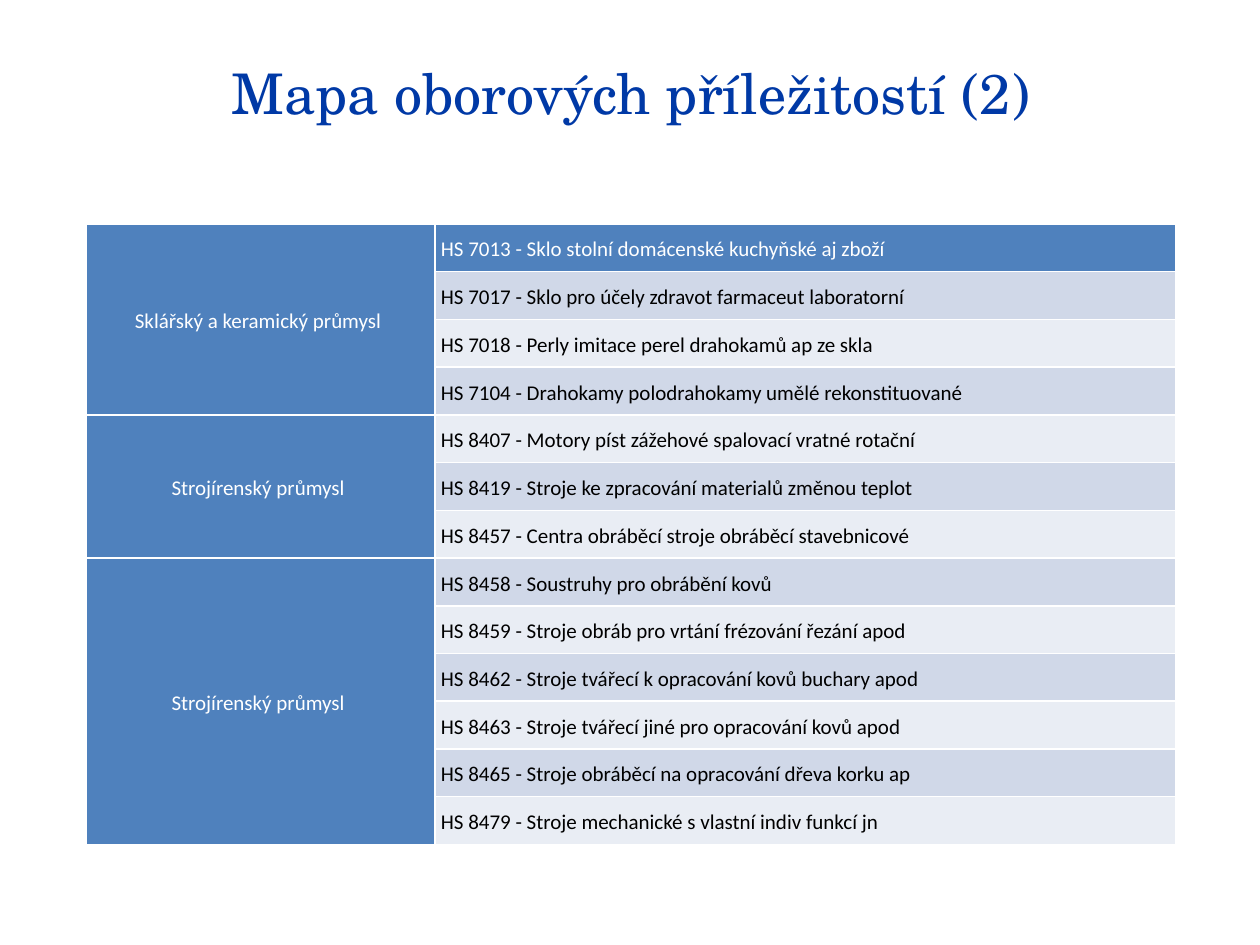
from lxml import etree
from pptx import Presentation
from pptx import util as u
from pptx.dml.color import RGBColor
from pptx.enum import text
from pptx.oxml import ns

EMU_PER_PX = 914400 / 126
COLORS = {
    "title": "0039A6",
    "header": "4F81BD",
    "dark_band": "D0D8E8",
    "light_band": "E9EDF4",
    "border": "FFFFFF",
    "light_text": "FFFFFF",
    "dark_text": "000000",
}
SECTORS = [
    ("Sklářský a keramický průmysl ", [
        "HS 7013 - Sklo stolní domácenské kuchyňské aj zboží",
        "HS 7017 - Sklo pro účely zdravot farmaceut laboratorní",
        "HS 7018 - Perly imitace perel drahokamů ap ze skla",
        "HS 7104 - Drahokamy polodrahokamy umělé rekonstituované",
    ]),
    ("Strojírenský průmysl ", [
        "HS 8407 - Motory píst zážehové spalovací vratné rotační",
        "HS 8419 - Stroje ke zpracování materialů změnou teplot",
        "HS 8457 - Centra obráběcí stroje obráběcí stavebnicové",
    ]),
    ("Strojírenský průmysl ", [
        "HS 8458 - Soustruhy pro obrábění kovů",
        "HS 8459 - Stroje obráb pro vrtání frézování řezání apod",
        "HS 8462 - Stroje tvářecí k opracování kovů buchary apod",
        "HS 8463 - Stroje tvářecí jiné pro opracování kovů apod",
        "HS 8465 - Stroje obráběcí na opracování dřeva korku ap",
        "HS 8479 - Stroje mechanické s vlastní indiv funkcí jn",
    ]),
]


def px(length):
    return u.Emu(round(length * EMU_PER_PX))


def rgb(name):
    return RGBColor.from_string(COLORS[name])


def assign(target, values):
    for name, value in values.items():
        setattr(target, name, value)


class SlideBuilder:
    """Holds the text style and the current slide."""

    title_font = {"name": "TeX Gyre Schola", "size": u.Pt(32)}
    cell_font = {"name": "Calibri", "size": u.Pt(12)}
    cell_format = {
        "margin_left": px(6), "margin_right": px(6),
        "margin_top": px(9), "margin_bottom": px(9),
        "vertical_anchor": text.MSO_ANCHOR.MIDDLE,
    }

    def __init__(self, slide):
        self.slide = slide

    def title(self, wording, left, top, width, height):
        title = self.slide.shapes.title
        assign(title, {"left": px(left), "top": px(top),
                       "width": px(width), "height": px(height)})
        title.text_frame.text = wording
        assign(title.text_frame, {"vertical_anchor": text.MSO_ANCHOR.MIDDLE,
                                  "word_wrap": True})
        paragraph = title.text_frame.paragraphs[0]
        paragraph.alignment = text.PP_ALIGN.CENTER
        assign(paragraph.font, self.title_font)
        paragraph.font.color.rgb = rgb("title")

    def borders(self, cell, points=1):
        properties = cell._tc.get_or_add_tcPr()
        for side in ("lnL", "lnR", "lnT", "lnB"):
            line = etree.SubElement(properties, ns.qn(f"a:{side}"), w=str(u.Pt(points)))
            fill = etree.SubElement(line, ns.qn("a:solidFill"))
            etree.SubElement(fill, ns.qn("a:srgbClr"), val=COLORS["border"])

    def cell(self, cell, wording, fill, color, alignment):
        self.borders(cell)
        assign(cell, self.cell_format)
        cell.fill.solid()
        cell.fill.fore_color.rgb = rgb(fill)
        cell.text = wording
        paragraph = cell.text_frame.paragraphs[0]
        assign(paragraph, {"alignment": alignment, "line_spacing": 1.15})
        assign(paragraph.font, self.cell_font)
        paragraph.font.color.rgb = rgb(color)

    def sector_table(self, sectors, left, top, widths, height):
        """Draw one merged sector cell beside its product rows."""
        row_count = sum(len(products) for _, products in sectors)
        table = self.slide.shapes.add_table(
            row_count, len(widths), px(left), px(top), px(sum(widths)), px(height)).table
        for column, width in zip(table.columns, widths):
            column.width = px(width)
        row = 0
        for sector, products in sectors:
            first_row = row
            for product in products:
                label = sector if row == first_row else ""
                self.cell(table.cell(row, 0), label, "header", "light_text",
                          text.PP_ALIGN.CENTER)
                band = "dark_band" if row % 2 else "light_band"
                fill, color = (band, "dark_text") if row else ("header", "light_text")
                self.cell(table.cell(row, 1), product, fill, color, text.PP_ALIGN.LEFT)
                row += 1
            table.cell(first_row, 0).merge(table.cell(row - 1, 0))


def main():
    deck = Presentation()
    assign(deck, {"slide_width": px(1260), "slide_height": px(945)})
    title_only = deck.slide_layouts[5]
    builder = SlideBuilder(deck.slides.add_slide(title_only))
    builder.title("Mapa oborových příležitostí (2)", 64, 13, 1134, 158)
    builder.sector_table(SECTORS, 86, 224, (349, 741), 621)
    deck.save("out.pptx")


if __name__ == "__main__":
    main()
